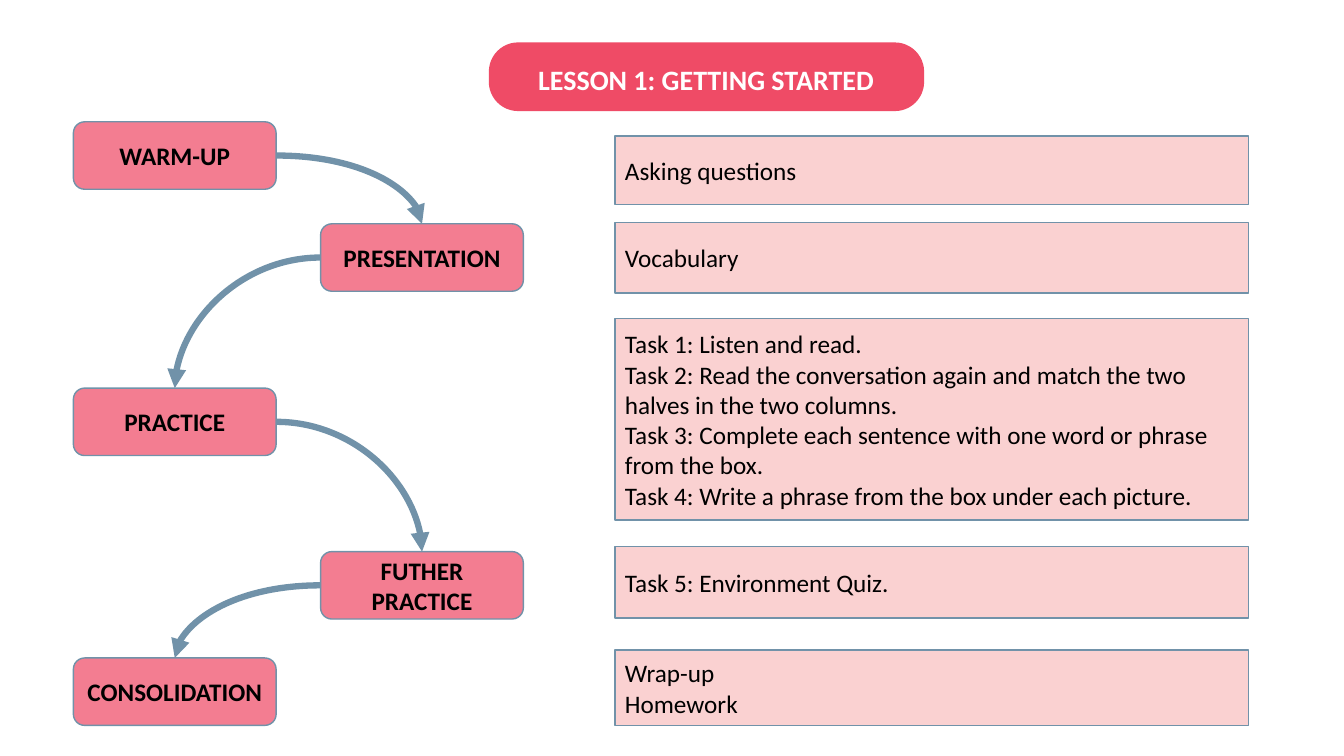
from dataclasses import dataclass
from itertools import pairwise

from lxml.etree import SubElement
from pptx import Presentation
from pptx.dml.color import RGBColor as Rgb
from pptx.enum.shapes import MSO_CONNECTOR as Connector, MSO_SHAPE as Preset
from pptx.enum.text import MSO_ANCHOR as Anchor, PP_ALIGN as Align
from pptx.oxml.ns import qn
from pptx.util import Cm, Pt


@dataclass(frozen=True)
class Theme:
    font: str = "Calibri"
    title_size: Pt = Pt(20)
    body_size: Pt = Pt(18)
    border_width: Pt = Pt(1)
    arrow_width: Pt = Pt(4.5)
    banner: Rgb = Rgb(0xEF, 0x4B, 0x66)
    stage: Rgb = Rgb(0xF3, 0x7D, 0x91)
    detail: Rgb = Rgb(0xF7, 0xA5, 0xA5)
    outline: Rgb = Rgb(0x71, 0x92, 0xA9)
    dark: Rgb = Rgb(0, 0, 0)
    light: Rgb = Rgb(0xFF, 0xFF, 0xFF)


theme = Theme()


def add_box(preset, left, top, width, height, fill, border=True):
    shape = slide.shapes.add_shape(preset, Cm(left), Cm(top), Cm(width), Cm(height))
    shape.shadow.inherit = False
    shape.fill.solid()
    shape.fill.fore_color.rgb = fill
    if border:
        shape.line.color.rgb = theme.outline
        shape.line.width = theme.border_width
    else:
        shape.line.fill.background()
    return shape


def write(shape, lines, align=Align.LEFT, bold=False, size=theme.body_size, color=theme.dark):
    frame = shape.text_frame
    frame.word_wrap = True
    for index, line in enumerate(lines):
        paragraph = frame.add_paragraph() if index else frame.paragraphs[0]
        paragraph.alignment = align
        run = paragraph.add_run()
        run.text = line
        run.font.name = theme.font
        run.font.size = size
        run.font.bold = bold
        run.font.color.rgb = color


presentation = Presentation()
presentation.slide_width = Cm(33.87)
presentation.slide_height = Cm(19.05)
slide = presentation.slides.add_slide(presentation.slide_layouts[6])

# Title banner
banner = add_box(Preset.ROUNDED_RECTANGLE, 12.32, 1.07, 10.97, 1.73, theme.banner, border=False)
banner.adjustments[0] = 0.427
title = slide.shapes.add_textbox(Cm(13.31), Cm(1.45), Cm(9.98), Cm(1.12))
write(title, ["LESSON 1: GETTING STARTED"], bold=True, size=theme.title_size, color=theme.light)

# Lesson stages, alternating between two columns
stage_lefts = (1.85, 8.08)
stage_rows = [
    ("WARM-UP", 3.07),
    ("PRESENTATION", 5.64),
    ("PRACTICE", 9.78),
    ("FUTHER PRACTICE", 13.9),
    ("CONSOLIDATION", 16.58),
]
stages = []
for index, (name, top) in enumerate(stage_rows):
    stage = add_box(Preset.ROUNDED_RECTANGLE, stage_lefts[index % 2], top, 5.11, 1.7, theme.stage)
    stage.text_frame.vertical_anchor = Anchor.MIDDLE
    write(stage, [name], Align.CENTER, bold=True)
    stages.append(stage)

# Curved arrows from the side of each stage to the top of the next
TOP_SITE, LEFT_SITE, RIGHT_SITE = 0, 1, 3
for start, end in pairwise(stages):
    arrow = slide.shapes.add_connector(Connector.CURVE, 0, 0, 0, 0)
    arrow.begin_connect(start, RIGHT_SITE if start.left < end.left else LEFT_SITE)
    arrow.end_connect(end, TOP_SITE)
    arrow.line.color.rgb = theme.outline
    arrow.line.width = theme.arrow_width
    properties = arrow._element.spPr
    properties.find(qn("a:prstGeom")).set("prst", "curvedConnector2")
    SubElement(properties.find(qn("a:ln")), qn("a:tailEnd"), type="triangle")
    SubElement(properties, qn("a:effectLst"))

# Activities of each stage
activities = [
    (3.43, 1.73, ["Asking questions"]),
    (5.61, 1.78, ["Vocabulary"]),
    (8.03, 5.08, [
        "Task 1: Listen and read.",
        "Task 2: Read the conversation again and match the two halves in the two columns.",
        "Task 3: Complete each sentence with one word or phrase from the box.",
        "Task 4: Write a phrase from the box under each picture.",
    ]),
    (13.77, 1.8, ["Task 5: Environment Quiz."]),
    (16.38, 1.91, ["Wrap-up", "Homework"]),
]
for top, height, lines in activities:
    detail = add_box(Preset.RECTANGLE, 15.5, top, 15.97, height, theme.detail)
    fill_color = detail._element.spPr.find(qn("a:solidFill"))[0]
    SubElement(fill_color, qn("a:alpha"), val="50000")
    detail.text_frame.vertical_anchor = Anchor.MIDDLE
    write(detail, lines)

presentation.save("out.pptx")
